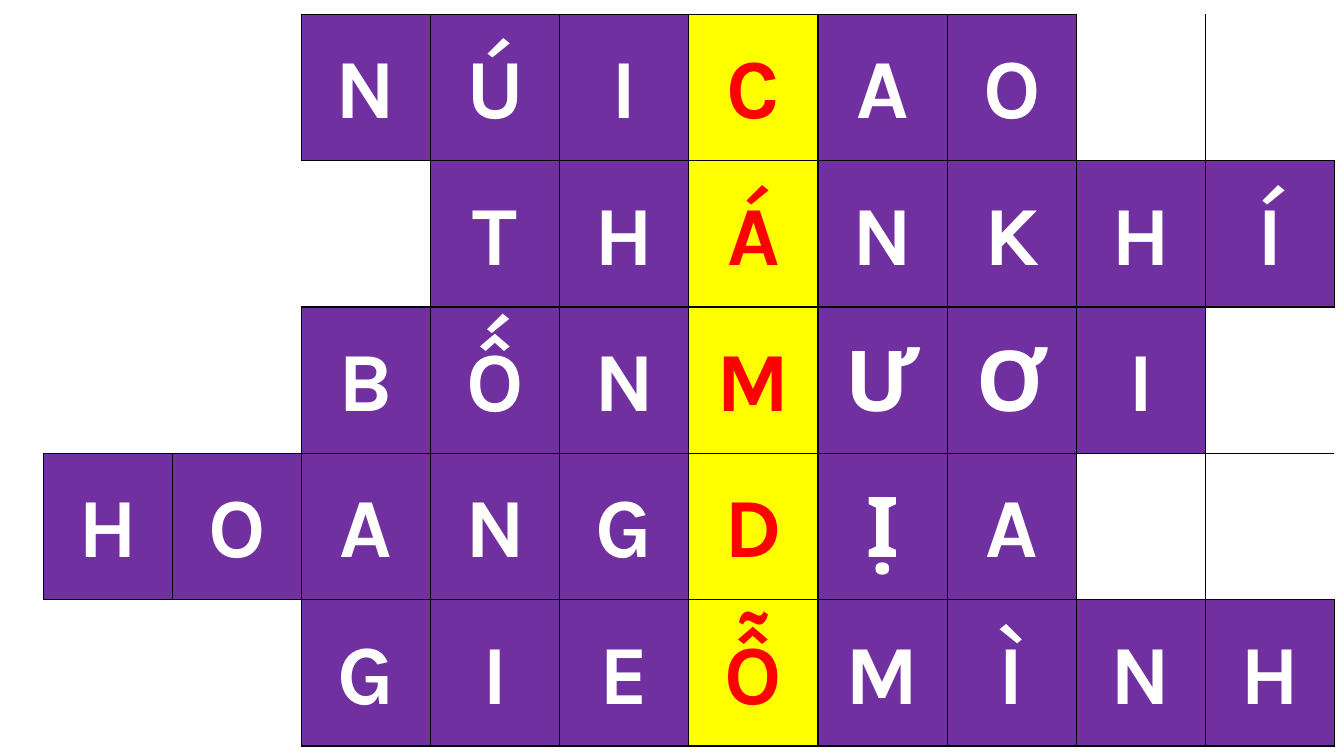
from lxml import etree
from pptx import Presentation
from pptx.dml.color import RGBColor
from pptx.enum.text import MSO_ANCHOR, PP_ALIGN
from pptx.oxml.ns import qn
from pptx.util import Cm, Pt

MIDDLE = MSO_ANCHOR.MIDDLE
CENTER = PP_ALIGN.CENTER
WHITE = RGBColor(0xFF, 0xFF, 0xFF)
BLACK = RGBColor(0x00, 0x00, 0x00)
PURPLE = RGBColor(0x70, 0x30, 0xA0)
YELLOW = RGBColor(0xFF, 0xFF, 0x00)
RED = RGBColor(0xFF, 0x00, 0x00)
PLAIN_TABLE = "{2D5ABB26-0587-4C30-8999-92F81FD0307C}"

COLUMNS = 10
KEY_COLUMN = 5
WORDS = [(2, "NÚICAO"), (3, "THÁNKHÍ"), (2, "BỐNMƯƠI"), (0, "HOANGDỊA"), (2, "GIEỖMÌNH")]
SIDES = {"a:lnL": (0, -1), "a:lnR": (0, 1), "a:lnT": (-1, 0), "a:lnB": (1, 0)}


def set_format(target, values):
    for name, value in values.items():
        setattr(target, name, value)


class CrosswordSlide:
    letter_font = {"name": "Karla", "size": Pt(60), "bold": True}
    letter_para = {"alignment": CENTER, "line_spacing": 1.07, "space_after": Pt(8)}
    cell_format = {
        "vertical_anchor": MIDDLE,
        "margin_left": Cm(0.19),
        "margin_right": Cm(0.19),
        "margin_top": 0,
        "margin_bottom": 0,
    }

    def __init__(self, deck):
        self.page = deck.slides.add_slide(deck.slide_layouts[6])

    def add_crossword(self, words, left, top, width, height):
        letters = {
            (row, start + index): letter
            for row, (start, word) in enumerate(words)
            for index, letter in enumerate(word)
        }
        frame = self.page.shapes.add_table(len(words), COLUMNS, left, top, width, height)
        table = frame.table
        set_format(table, {"first_row": False, "horz_banding": False})
        table._tbl.tblPr.find(qn("a:tableStyleId")).text = PLAIN_TABLE
        for row in range(len(words)):
            for column in range(COLUMNS):
                cell = table.cell(row, column)
                set_format(cell, self.cell_format)
                self.add_borders(cell, row, column, letters)
                self.fill_cell(cell, letters.get((row, column)), column == KEY_COLUMN)

    def fill_cell(self, cell, letter, is_key):
        cell.fill.solid()
        if letter is None:
            cell.fill.fore_color.rgb = WHITE
            return
        cell.fill.fore_color.rgb = YELLOW if is_key else PURPLE
        para = cell.text_frame.paragraphs[0]
        set_format(para, self.letter_para)
        span = para.add_run()
        span.text = letter
        set_format(span.font, self.letter_font)
        span.font.color.rgb = RED if is_key else WHITE

    def add_borders(self, cell, row, column, letters):
        properties = cell._tc.get_or_add_tcPr()
        for tag, (down, right) in SIDES.items():
            if (row, column) in letters or (row + down, column + right) in letters:
                line = etree.SubElement(properties, qn(tag), w=str(Pt(1)))
                fill = etree.SubElement(line, qn("a:solidFill"))
                etree.SubElement(fill, qn("a:srgbClr"), val=str(BLACK))


def main():
    deck = Presentation()
    set_format(deck, {"slide_width": Cm(33.87), "slide_height": Cm(19.05)})
    crossword = CrosswordSlide(deck)
    crossword.add_crossword(WORDS, Cm(1.09), Cm(0.36), Cm(32.54), Cm(18.44))
    deck.save("out.pptx")


if __name__ == "__main__":
    main()
